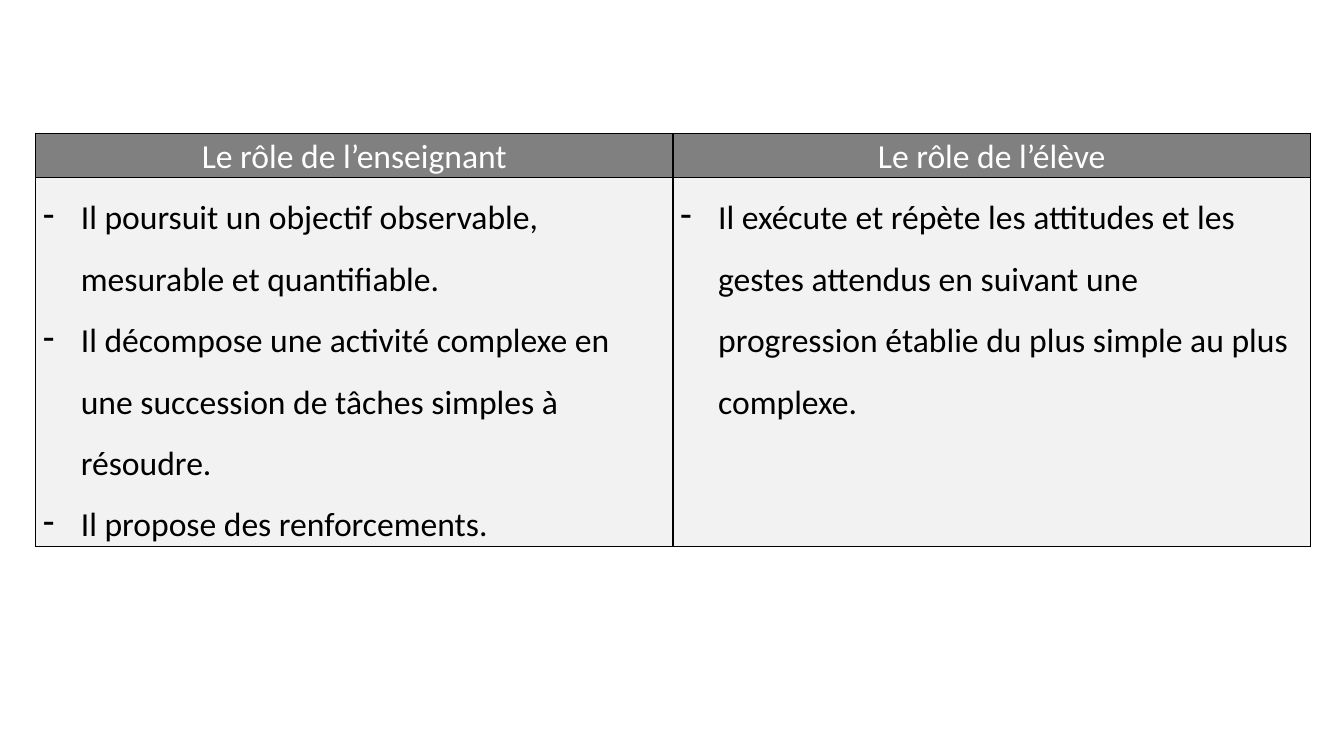
from lxml import etree
from pptx import Presentation
from pptx import util as u
from pptx.dml.color import RGBColor
from pptx.enum import text
from pptx.oxml import ns

PX = 9525  # EMU per px
BORDER_PT = 1
INDENT = 36

ROLES = {
    "Le rôle de l’enseignant": [
        "Il poursuit un objectif observable, mesurable et quantifiable.",
        "Il décompose une activité complexe en une succession de tâches simples à résoudre.",
        "Il propose des renforcements.",
    ],
    "Le rôle de l’élève": [
        "Il exécute et répète les attitudes et les gestes attendus en suivant une "
        "progression établie du plus simple au plus complexe.",
    ],
}


def px(length):
    return u.Emu(length * PX)


def colour(value):
    return RGBColor.from_string(value)


def style_cell(cell, fill):
    cell.margin_left = cell.margin_right = px(7)
    cell.margin_top = cell.margin_bottom = 0
    cell.fill.solid()
    cell.fill.fore_color.rgb = colour(fill)
    # Borders come before the fill in the cell properties
    properties = cell._tc.get_or_add_tcPr()
    for position, side in enumerate(("lnL", "lnR", "lnT", "lnB")):
        border = etree.Element(ns.qn(f"a:{side}"), w=str(u.Pt(BORDER_PT)))
        line_fill = etree.SubElement(border, ns.qn("a:solidFill"))
        etree.SubElement(line_fill, ns.qn("a:srgbClr"), val="000000")
        properties.insert(position, border)


def style_font(paragraph, value):
    paragraph.font.name = "Calibri"
    paragraph.font.size = u.Pt(24)
    paragraph.font.bold = False
    paragraph.font.color.rgb = colour(value)


def fill_heading(cell, role):
    style_cell(cell, "808080")
    cell.vertical_anchor = text.MSO_ANCHOR.MIDDLE
    heading = cell.text_frame.paragraphs[0]
    heading.text = role
    heading.alignment = text.PP_ALIGN.CENTER
    heading.line_spacing = 1.07
    heading.space_after = u.Pt(8)
    style_font(heading, "FFFFFF")


def fill_duties(cell, duties):
    style_cell(cell, "F2F2F2")
    cell.text_frame.text = "\n".join(duties)
    for duty in cell.text_frame.paragraphs:
        duty.line_spacing = 1.5
        properties = duty._p.get_or_add_pPr()
        properties.set("marL", str(px(INDENT)))
        properties.set("indent", str(px(-INDENT)))
        etree.SubElement(properties, ns.qn("a:buChar"), char="-")
        style_font(duty, "000000")


def add_roles_table(slide, left, top, width, height):
    roles = slide.shapes.add_table(
        2, len(ROLES), px(left), px(top), px(width), px(height)).table
    roles.first_row = roles.horz_banding = False
    heading_height = 35
    roles.rows[0].height = px(heading_height)
    roles.rows[1].height = px(height - heading_height)
    for column, (role, duties) in enumerate(ROLES.items()):
        roles.columns[column].width = px(width // len(ROLES))
        fill_heading(roles.cell(0, column), role)
        fill_duties(roles.cell(1, column), duties)


def main():
    deck = Presentation()
    deck.slide_width, deck.slide_height = px(1280), px(720)
    slide = deck.slides.add_slide(deck.slide_layouts[6])
    add_roles_table(slide, 34, 127, 1214, 328)
    deck.save("out.pptx")


if __name__ == "__main__":
    main()
